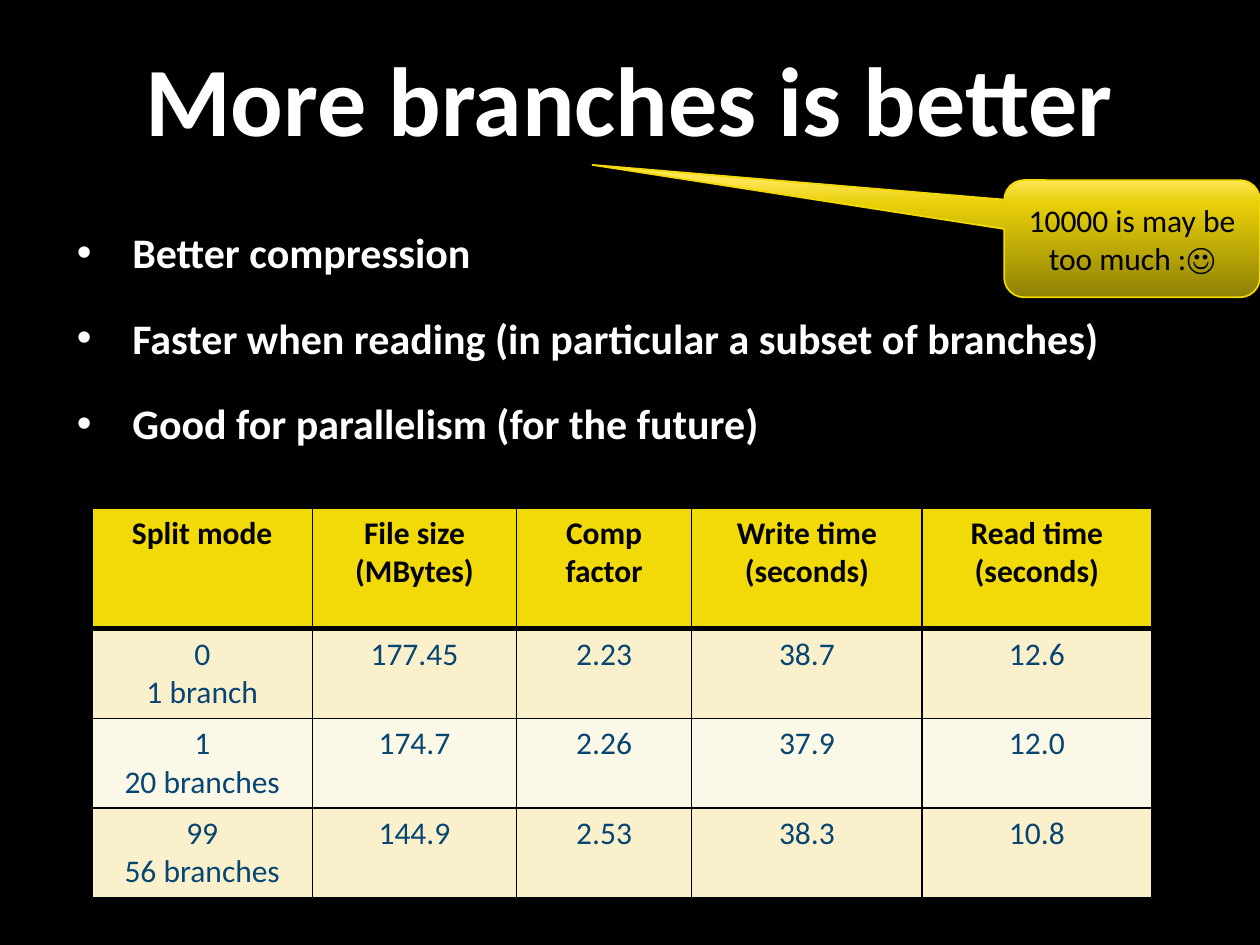
from dataclasses import dataclass

from lxml import etree
from pptx import Presentation
from pptx.dml.color import RGBColor
from pptx.enum.shapes import MSO_SHAPE
from pptx.enum.text import MSO_ANCHOR, MSO_AUTO_SIZE, PP_ALIGN
from pptx.oxml.ns import qn
from pptx.util import Emu, Inches, Pt

CENTER = PP_ALIGN.CENTER
LEFT = PP_ALIGN.LEFT
MIDDLE = MSO_ANCHOR.MIDDLE
TOP = MSO_ANCHOR.TOP
NO_FIT = MSO_AUTO_SIZE.NONE
CALLOUT = MSO_SHAPE.ROUNDED_RECTANGULAR_CALLOUT

FONT = "Calibri"
WHITE, BLACK, NAVY = "FFFFFF", "000000", "074573"
YELLOW, CREAM, IVORY = "F2D908", "FAF1CC", "FCF8E7"


@dataclass
class Box:
    """A frame in inches."""
    left: float
    top: float
    width: float
    height: float

    def emu(self) -> list[Emu]:
        return [Inches(v) for v in (self.left, self.top, self.width, self.height)]


@dataclass
class Style:
    size: float
    color: str
    bold: bool = False
    align: PP_ALIGN = CENTER


def rgb(value: str) -> RGBColor:
    return RGBColor.from_string(value)


def write(tf, text: str, style: Style) -> None:
    tf.text = text
    for p in tf.paragraphs:
        p.alignment = style.align
        for r in p.runs:
            r.font.name = FONT
            r.font.size = Pt(style.size)
            r.font.bold = style.bold
            r.font.color.rgb = rgb(style.color)


def place(sp, box: Box, anchor: MSO_ANCHOR) -> None:
    sp.left, sp.top, sp.width, sp.height = box.emu()
    sp.text_frame.auto_size = NO_FIT
    sp.text_frame.word_wrap = True
    sp.text_frame.vertical_anchor = anchor


def set_bullets(tf, indent: float, gap: float) -> None:
    for i, p in enumerate(tf.paragraphs):
        pPr = p._p.get_or_add_pPr()
        pPr.set("marL", str(Inches(indent)))
        pPr.set("indent", str(-Inches(indent)))
        etree.SubElement(pPr, qn("a:buChar"), char="•")
        p.space_before = Pt(gap if i else 0)


def set_borders(cell, widths: dict[str, float]) -> None:
    tcPr = cell._tc.get_or_add_tcPr()
    for i, (side, width) in enumerate(widths.items()):
        ln = etree.Element(qn(f"a:ln{side}"), w=str(Pt(width)))
        fill = etree.SubElement(ln, qn("a:solidFill"))
        etree.SubElement(fill, qn("a:srgbClr"), val=BLACK)
        tcPr.insert(i, ln)


def set_gradient(sp, stops: list[tuple[int, str]], angle: int) -> None:
    sp.fill.gradient()
    sp.fill.gradient_angle = angle
    gs_list = sp._element.spPr.find(qn("a:gradFill")).find(qn("a:gsLst"))
    for gs in list(gs_list):
        gs_list.remove(gs)
    for percent, color in stops:
        gs = etree.SubElement(gs_list, qn("a:gs"), pos=str(percent * 1000))
        etree.SubElement(gs, qn("a:srgbClr"), val=color)


def add_results(slide, box: Box, columns: list[float], heights: list[float],
                rows: list[list[str]]) -> None:
    table = slide.shapes.add_table(len(rows), len(columns), *box.emu()).table
    for column, width in zip(table.columns, columns):
        column.width = Inches(width)
    for i, (row, values) in enumerate(zip(table.rows, rows)):
        row.height = Inches(heights[i])
        fill = YELLOW if i == 0 else CREAM if i % 2 else IVORY
        style = Style(18, NAVY if i else BLACK, bold=i == 0)
        for cell, value in zip(row.cells, values):
            write(cell.text_frame, value, style)
            cell.fill.solid()
            cell.fill.fore_color.rgb = rgb(fill)
            set_borders(cell, {"L": 1, "R": 1, "T": 3 if i == 1 else 1,
                               "B": 1 if i else 3})


def add_callout(slide, box: Box, text: str) -> None:
    sp = slide.shapes.add_shape(CALLOUT, *box.emu())
    for i, value in enumerate((-2.11, -0.63, 0.17)):
        sp.adjustments[i] = value
    sp.shadow.inherit = False
    set_gradient(sp, [(0, "8F8105"), (80, "E7CF08"), (100, "FFE552")], 90)
    sp.line.color.rgb = rgb("F2D902")
    sp.line.width = Pt(1)
    place(sp, box, MIDDLE)
    write(sp.text_frame, text, Style(18, BLACK))


def main() -> None:
    prs = Presentation()
    prs.slide_width, prs.slide_height = Inches(10), Inches(7.5)
    slide = prs.slides.add_slide(prs.slide_layouts[1])
    slide.background.fill.solid()
    slide.background.fill.fore_color.rgb = rgb(BLACK)

    # Title and bullet list
    title, body = slide.placeholders
    place(title, Box(0.85, 0.12, 8.29, 1.31), MIDDLE)
    write(title.text_frame, "More branches is better", Style(56, WHITE, True))
    place(body, Box(0.51, 1.75, 8.92, 4.63), TOP)
    write(body.text_frame, "\n".join([
        "Better compression",
        "Faster when reading (in particular a subset of branches)",
        "Good for parallelism (for the future)",
    ]), Style(24, WHITE, True, LEFT))
    set_bullets(body.text_frame, indent=0.44, gap=20)

    # Results by split mode
    add_results(slide, Box(0.73, 4.03, 8.41, 3.09),
                [1.75, 1.62, 1.39, 1.83, 1.82], [0.96] + [0.71] * 3, [
        ["Split mode", "File size (MBytes)", "Comp factor",
         "Write time\n(seconds)", "Read time\n(seconds)"],
        ["0\n1 branch", "177.45", "2.23", "38.7", "12.6"],
        ["1\n20 branches", "174.7", "2.26", "37.9", "12.0"],
        ["99\n56 branches", "144.9", "2.53", "38.3", "10.8"],
    ])

    # Remark on the title
    add_callout(slide, Box(7.97, 1.43, 2.03, 0.93), "10000 is may be too much :☺")

    prs.save("out.pptx")


if __name__ == "__main__":
    main()
